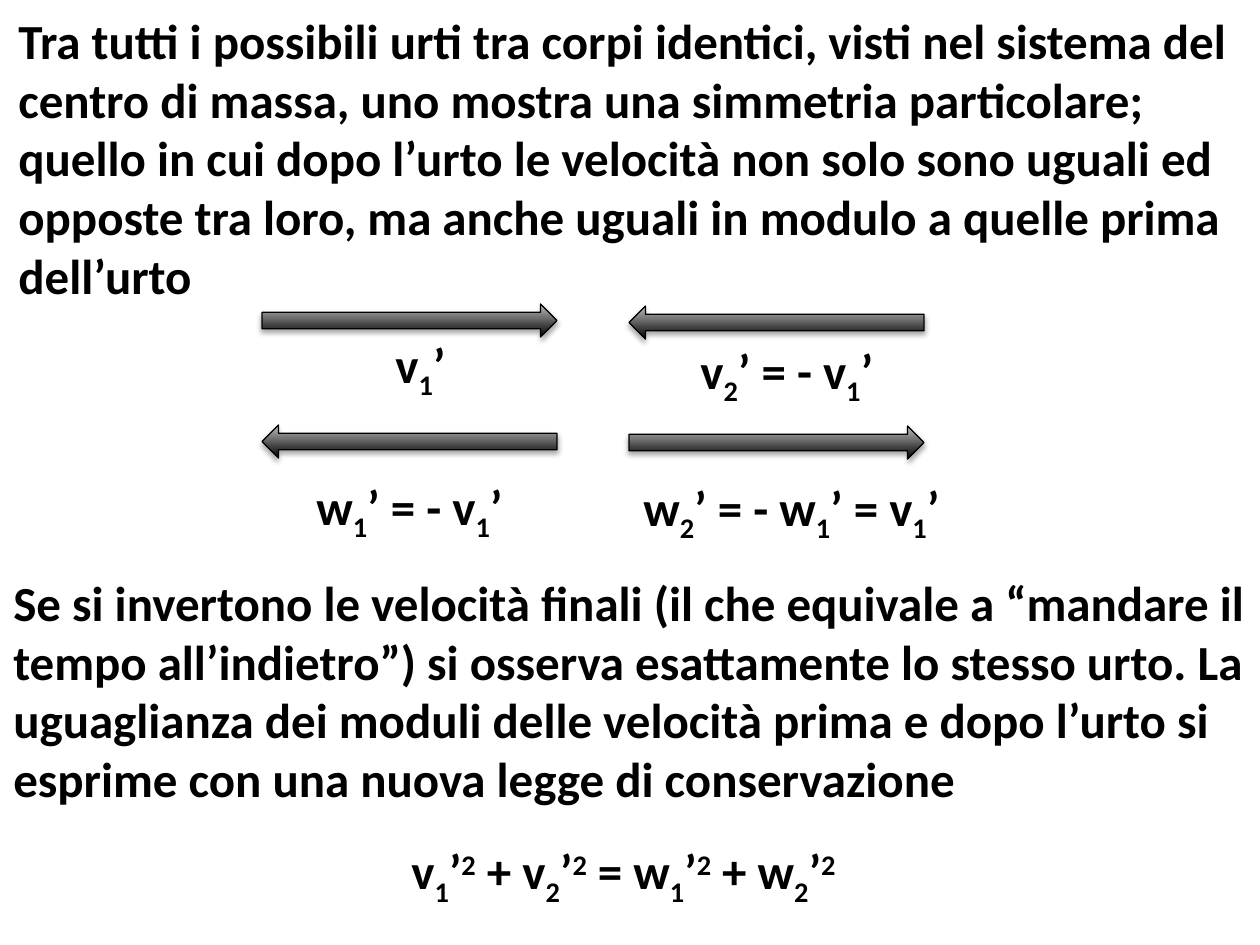
"""Build a slide on the symmetric collision of identical bodies in the centre-of-mass frame."""
from dataclasses import dataclass
from typing import NamedTuple

import lxml.etree
import pptx
import pptx.dml.color
import pptx.enum.shapes
import pptx.oxml.ns
import pptx.util

PX = pptx.util.Inches(1) / 126
BLACK = pptx.dml.color.RGBColor(0x00, 0x00, 0x00)
GREY = pptx.dml.color.RGBColor(0xBD, 0xBD, 0xBD)
LEFT = pptx.enum.shapes.MSO_SHAPE.LEFT_ARROW
RIGHT = pptx.enum.shapes.MSO_SHAPE.RIGHT_ARROW
ARROW_W, ARROW_H = 295, 33
LABEL_H = 72
FORMULA_INDENT = 398


class Run(NamedTuple):
    text: str
    baseline: int = 0


@dataclass
class Arrow:
    kind: pptx.enum.shapes.MSO_SHAPE
    x: int
    y: int


@dataclass
class Label:
    x: int
    y: int
    w: int
    runs: list[Run]


SUB_1, SUB_2, SQUARED = Run("1", -25), Run("2", -25), Run("2", 30)
PRIME = Run("’")

INTRO = [
    "Tra tutti i possibili urti tra corpi identici, visti nel sistema del",
    "centro di massa, uno mostra una simmetria particolare;",
    "quello in cui dopo l’urto le velocità non solo sono uguali ed",
    "opposte tra loro, ma anche uguali in modulo a quelle prima",
    "dell’urto",
]
CONCLUSION = [
    "Se si invertono le velocità finali (il che equivale a “mandare il",
    "tempo all’indietro”) si osserva esattamente lo stesso urto. La",
    "uguaglianza dei moduli delle velocità prima e dopo l’urto si",
    "esprime con una nuova legge di conservazione",
]
CONSERVATION = [
    Run("v"), SUB_1, PRIME, SQUARED,
    Run(" + v"), SUB_2, PRIME, SQUARED,
    Run(" = w"), SUB_1, PRIME, SQUARED,
    Run(" + w"), SUB_2, PRIME, SQUARED,
]
ARROWS = [
    Arrow(RIGHT, 262, 304),
    Arrow(LEFT, 629, 306),
    Arrow(LEFT, 262, 425),
    Arrow(RIGHT, 629, 426),
]
LABELS = [
    Label(383, 328, 78, [Run("v"), SUB_1, PRIME]),
    Label(688, 334, 204, [Run("v"), SUB_2, Run("’ = - v"), SUB_1, PRIME]),
    Label(304, 470, 246, [Run("w"), SUB_1, Run("’ = - v"), SUB_1, PRIME]),
    Label(631, 471, 357,
          [Run("w"), SUB_2, Run("’ = - w"), SUB_1, Run("’ = v"), SUB_1, PRIME]),
]


def px(n: int) -> int:
    return round(n * PX)


def add_text(s, x: int, y: int, w: int, h: int, lines: list[list[Run]]):
    tf = s.shapes.add_textbox(px(x), px(y), px(w), px(h)).text_frame
    tf.word_wrap = True
    for i, line in enumerate(lines):
        p = tf.add_paragraph() if i else tf.paragraphs[0]
        for run in line:
            r = p.add_run()
            r.text = run.text
            r.font.name = "Calibri"
            r.font.size = pptx.util.Pt(28)
            r.font.bold = True
            r.font.color.rgb = BLACK
            if run.baseline:
                r.font._element.set("baseline", str(run.baseline * 1000))
    return tf


def add_shadow(sp) -> None:
    sp.shadow.inherit = False
    effects = sp._element.spPr.find(pptx.oxml.ns.qn("a:effectLst"))
    shadow = lxml.etree.SubElement(
        effects, pptx.oxml.ns.qn("a:outerShdw"),
        blurRad=str(pptx.util.Pt(3.1)), dist=str(pptx.util.Pt(1.8)),
        dir="5400000", rotWithShape="0")
    color = lxml.etree.SubElement(shadow, pptx.oxml.ns.qn("a:srgbClr"), val=str(BLACK))
    lxml.etree.SubElement(color, pptx.oxml.ns.qn("a:alpha"), val="35000")


def add_arrow(s, arrow: Arrow) -> None:
    sp = s.shapes.add_shape(arrow.kind, px(arrow.x), px(arrow.y), px(ARROW_W), px(ARROW_H))
    sp.fill.gradient()
    sp.fill.gradient_angle = 90
    for stop, color in zip(sp.fill.gradient_stops, (BLACK, GREY)):
        stop.color.rgb = color
    sp.line.color.rgb = BLACK
    sp.line.width = pptx.util.Pt(0.75)
    add_shadow(sp)


def main() -> None:
    prs = pptx.Presentation()
    prs.slide_width, prs.slide_height = px(1260), px(945)
    s = prs.slides.add_slide(prs.slide_layouts[6])
    add_text(s, 6, 4, 1254, 308, [[Run(line)] for line in INTRO])
    for arrow in ARROWS:
        add_arrow(s, arrow)
    for label in LABELS:
        add_text(s, label.x, label.y, label.w, LABEL_H, [label.runs])
    tf = add_text(s, 1, 566, 1274, 378, [[Run(line)] for line in CONCLUSION] + [CONSERVATION])
    p = tf.paragraphs[-1]
    p.line_spacing = 1.5
    p._p.get_or_add_pPr().set("marL", str(px(FORMULA_INDENT)))
    prs.save("out.pptx")


if __name__ == "__main__":
    main()
